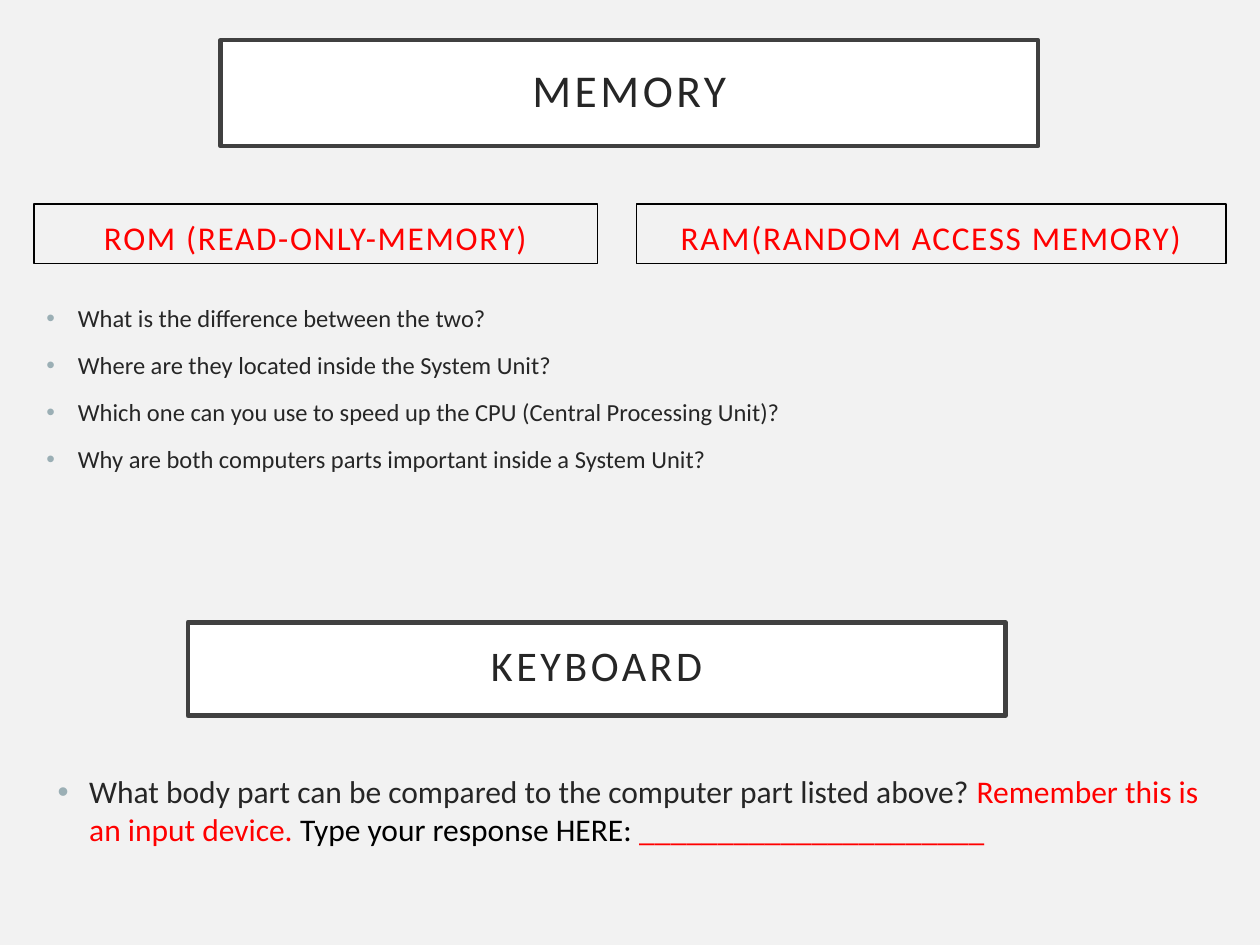
from pptx import Presentation
from pptx.dml.color import RGBColor
from pptx.enum.shapes import MSO_SHAPE
from pptx.enum.text import MSO_ANCHOR, PP_ALIGN
from pptx.oxml.ns import qn
from pptx.util import Inches, Pt
from lxml import etree

BACKGROUND = RGBColor(0xF2, 0xF2, 0xF2)
WHITE = RGBColor(0xFF, 0xFF, 0xFF)
BLACK = RGBColor(0, 0, 0)
RED = RGBColor(0xFF, 0, 0)
DARK = RGBColor(0x26, 0x26, 0x26)
FRAME = RGBColor(0x40, 0x40, 0x40)
BULLET = "9BAFB5"

prs = Presentation()
prs.slide_width, prs.slide_height = Inches(10), Inches(7.5)
s = prs.slides.add_slide(prs.slide_layouts[6])
s.background.fill.solid()
s.background.fill.fore_color.rgb = BACKGROUND


def add_box(text, box, size, color, line, width, spacing):
    """Outlined rectangle with one centred, letter-spaced line."""
    sp = s.shapes.add_shape(MSO_SHAPE.RECTANGLE, *map(Inches, box))
    sp.shadow.inherit = False
    sp.fill.background()
    sp.line.color.rgb = line
    sp.line.width = Pt(width)
    p = sp.text_frame.paragraphs[0]
    p.alignment = PP_ALIGN.CENTER
    r = p.add_run()
    r.text = text
    r.font.name, r.font.size = "Calibri", Pt(size)
    r.font.color.rgb = color
    r._r.get_or_add_rPr().set("spc", str(spacing * 100))
    return sp


def add_bullets(items, box, size):
    """Bulleted text box; each item is a list of (text, colour) runs."""
    tf = s.shapes.add_textbox(*map(Inches, box)).text_frame
    tf.word_wrap = True
    for i, runs in enumerate(items):
        p = tf.add_paragraph() if i else tf.paragraphs[0]
        p.space_before = Pt(10)
        p.font.name, p.font.size = "Calibri", Pt(size)
        pPr = p._p.get_or_add_pPr()
        pPr.set("marL", str(Inches(0.25)))
        pPr.set("indent", str(Inches(-0.25)))
        bu_clr = etree.Element(qn("a:buClr"))
        etree.SubElement(bu_clr, qn("a:srgbClr"), val=BULLET)
        bu_font = etree.Element(qn("a:buFont"), typeface="Arial")
        bu_char = etree.Element(qn("a:buChar"), char="•")
        for el in (bu_clr, bu_font, bu_char):
            pPr.find(qn("a:defRPr")).addprevious(el)
        for text, color in runs:
            r = p.add_run()
            r.text = text
            r.font.name, r.font.size = "Calibri", Pt(size)
            r.font.color.rgb = color


# Section titles
for text, box, size, leading in [
    ("MEMORY", (1.75, 0.32, 6.49, 0.84), 26, 0.9),
    ("KEYBOARD", (1.49, 4.94, 6.49, 0.74), 24.1, 0.8),
]:
    sp = add_box(text, box, size, DARK, FRAME, 2.5, 2)
    sp.fill.solid()
    sp.fill.fore_color.rgb = WHITE
    tf = sp.text_frame
    tf.margin_left = tf.margin_right = Inches(0.2)
    tf.margin_top = tf.margin_bottom = Inches(0.2)
    tf.vertical_anchor = MSO_ANCHOR.MIDDLE
    tf.paragraphs[0].line_spacing = leading

# Memory type headings
for text, left, width in [
    ("ROM (READ-ONLY-MEMORY)", 0.27, 4.47),
    ("RAM(RANDOM ACCESS MEMORY)", 5.05, 4.68),
]:
    sp = add_box(text, (left, 1.62, width, 0.47), 19, RED, BLACK, 0.75, 1)
    sp.text_frame.vertical_anchor = MSO_ANCHOR.BOTTOM
    sp.text_frame.paragraphs[0].space_before = Pt(10)

# Memory questions
questions = [
    "What is the difference between the two?",
    "Where are they located inside the System Unit?",
    "Which one can you use to speed up the CPU (Central Processing Unit)?",
    "Why are both computers parts important inside a System Unit?",
]
add_bullets([[(q, DARK)] for q in questions], (0.27, 2.36, 9.27, 2.3), 14)

# Keyboard question
add_bullets([[
    ("What body part can be compared to the computer part listed above? ", DARK),
    ("Remember this is an input device. ", RED),
    ("Type your response HERE: ", BLACK),
    ("_" * 22, RED),
]], (0.36, 6.08, 9.27, 0.9), 18)

prs.save("out.pptx")
